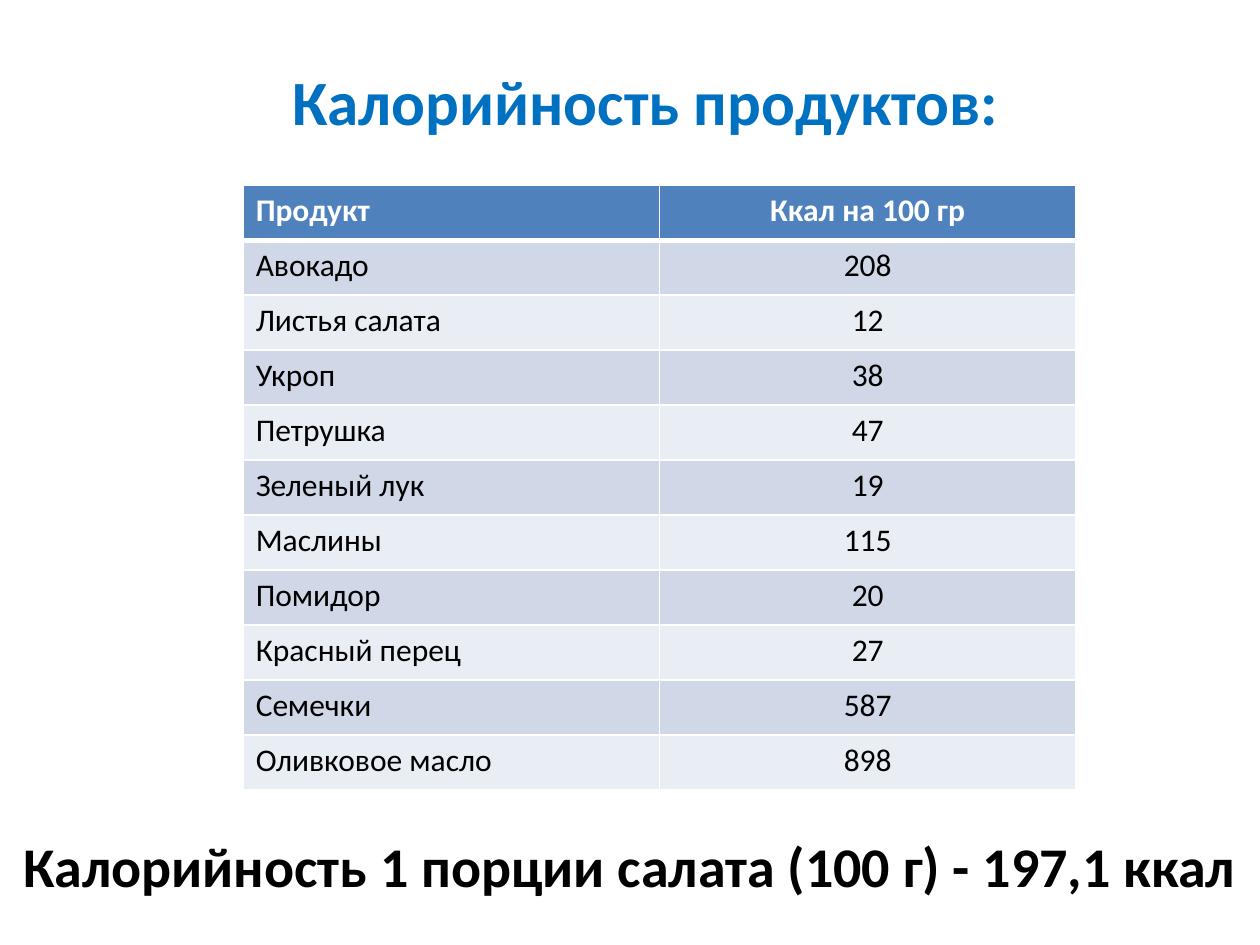
from lxml import etree
from pptx import Presentation
from pptx import util as u
from pptx.dml.color import RGBColor
from pptx.enum import text
from pptx.oxml import ns

COLORS = {
    "title": "0070C0",
    "header": "4F81BD",
    "odd": "D0D8E8",
    "even": "E9EDF4",
    "light": "FFFFFF",
    "dark": "000000",
}
FONT = "Calibri"
HEADER = ("Продукт", "Ккал на 100 гр")
PRODUCTS = [
    ("Авокадо", 208),
    ("Листья салата", 12),
    ("Укроп", 38),
    ("Петрушка", 47),
    ("Зеленый лук", 19),
    ("Маслины", 115),
    ("Помидор", 20),
    ("Красный перец", 27),
    ("Семечки", 587),
    ("Оливковое масло", 898),
]


def color(name):
    return RGBColor.from_string(COLORS[name])


def write(frame, words, size, shade, bold, align):
    """Put one formatted paragraph into a text frame."""
    para = frame.paragraphs[0]
    para.alignment = align
    span = para.add_run()
    span.text = words
    values = {"name": FONT, "size": u.Pt(size), "bold": bold}
    for key, value in values.items():
        setattr(span.font, key, value)
    span.font.color.rgb = color(shade)


def fit_line(shape, box, words, size, shade):
    """Place a centred bold line of text in the given box."""
    for key, value in zip(("left", "top", "width", "height"), box):
        setattr(shape, key, u.Inches(value))
    frame = shape.text_frame
    frame.word_wrap = True
    frame.auto_size = text.MSO_AUTO_SIZE.NONE
    frame.vertical_anchor = text.MSO_ANCHOR.MIDDLE
    write(frame, words, size, shade, True, text.PP_ALIGN.CENTER)


def set_borders(cell, bottom, top):
    """Draw white cell borders; line elements come before the fill."""
    props = cell._tc.get_or_add_tcPr()
    widths = {"lnL": 1, "lnR": 1, "lnT": top, "lnB": bottom}
    for index, (tag, width) in enumerate(widths.items()):
        line = etree.Element(ns.qn("a:" + tag), w=str(u.Pt(width)))
        fill = etree.SubElement(line, ns.qn("a:solidFill"))
        etree.SubElement(fill, ns.qn("a:srgbClr"), val=COLORS["light"])
        props.insert(index, line)


def add_calorie_table(page, box):
    rows = [HEADER] + PRODUCTS
    left, top, width, height = (u.Inches(value) for value in box)
    table = page.shapes.add_table(
        len(rows), len(HEADER), left, top, width, height).table
    aligns = (text.PP_ALIGN.LEFT, text.PP_ALIGN.CENTER)
    for r, row in enumerate(rows):
        is_header = r == 0
        fill = "header" if is_header else ("odd" if r % 2 else "even")
        for c, value in enumerate(row):
            cell = table.cell(r, c)
            cell.fill.solid()
            cell.fill.fore_color.rgb = color(fill)
            write(cell.text_frame, str(value), 18,
                  "light" if is_header else "dark", is_header, aligns[c])
            set_borders(cell, bottom=3 if is_header else 1,
                        top=3 if r == 1 else 1)


def main():
    deck = Presentation()
    deck.slide_width, deck.slide_height = u.Inches(10), u.Inches(7.5)
    page = deck.slides.add_slide(deck.slide_layouts.get_by_name("Title Only"))

    # Title
    fit_line(page.shapes.title, (0.67, 0.36, 8.91, 0.87),
             "Калорийность продуктов:", 36, "title")
    # Calories by product
    add_calorie_table(page, (1.93, 1.47, 6.61, 4.8))
    # Total for one portion
    total = page.shapes.add_textbox(0, 0, 0, 0)
    fit_line(total, (0, 6.43, 10, 0.87),
             "Калорийность 1 порции салата (100 г) - 197,1 ккал", 32, "dark")

    deck.save("out.pptx")


if __name__ == "__main__":
    main()
